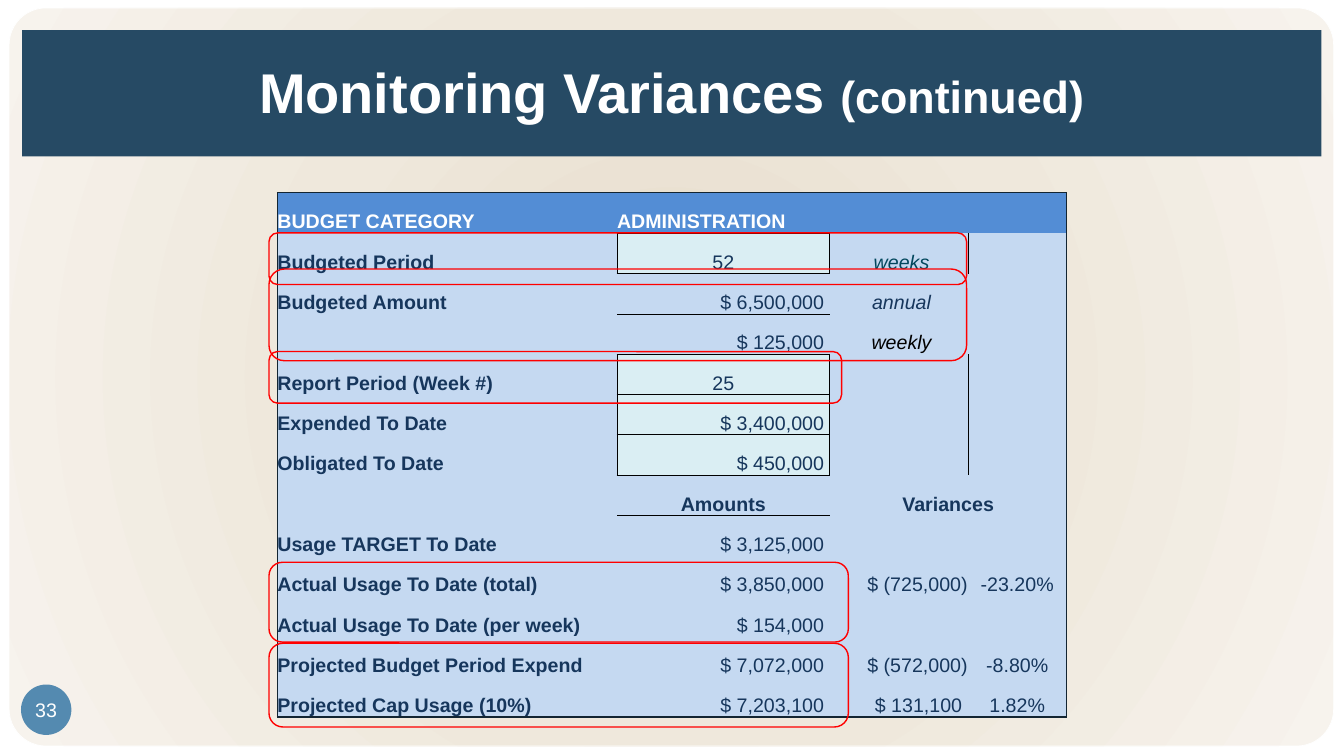
import pptx
import pptx.util
import pptx.dml.color
import pptx.enum.shapes
import pptx.enum.text
import pptx.oxml
import pptx.oxml.ns

Cm, Pt = pptx.util.Cm, pptx.util.Pt
KIND = pptx.enum.shapes.MSO_SHAPE
ALIGN = pptx.enum.text.PP_ALIGN
ANCHOR = pptx.enum.text.MSO_ANCHOR

HUES = {"white": "FFFFFF", "band": "264A64", "badge": "548AB0", "ring": "FF0000",
        "head": "538DD5", "body": "C5D9F1", "input": "DAEEF3", "ink": "16365C",
        "teal": "02475D", "black": "000000", "frame": "132532"}
GLOW = ((0, "E6DBC9"), (50, "EFE8DC"), (100, "F7F3ED"))

ROWS = [
    ("BUDGET CATEGORY", "ADMINISTRATION", "", ""),
    ("Budgeted Period", "52", "weeks", ""),
    ("Budgeted Amount", "$ 6,500,000", "annual", ""),
    ("", "$ 125,000", "weekly", ""),
    ("Report Period (Week #)", "25", "", ""),
    ("Expended To Date", "$ 3,400,000", "", ""),
    ("Obligated To Date", "$ 450,000", "", ""),
    ("", "Amounts", "Variances", ""),
    ("Usage TARGET To Date", "$ 3,125,000", "", ""),
    ("Actual Usage To Date (total)", "$ 3,850,000", "$ (725,000)", "-23.20%"),
    ("Actual Usage To Date (per week)", "$ 154,000", "", ""),
    ("Projected Budget Period Expend", "$ 7,072,000", "$ (572,000)", "-8.80%"),
    ("Projected Cap Usage (10%)", "$ 7,203,100", "$ 131,100", "1.82%"),
]
WIDTHS = (8.56, 5.36, 3.48, 2.49)
LEFT, TOP, HIGH = 6.99, 4.86, 13.21
SUBHEAD = 7
INPUTS = {(1, 1), (4, 1), (5, 1), (6, 1)}
NOTES = {"weeks": "teal", "annual": "ink", "weekly": "black"}
RING_X = 6.78
RINGS = [(5.87, 17.58, 1.3), (16.21, 14.6, 2.11), (14.17, 14.6, 2.01),
         (8.86, 14.43, 1.3), (6.78, 17.58, 2.31)]
TITLE = [("Monitoring Variances ", 40, True), ("(continued)", 32, True)]
SIDES = (("L", 0, -1), ("R", 0, 1), ("T", -1, 0), ("B", 1, 0))


def tint(name):
    return pptx.dml.color.RGBColor.from_string(HUES[name])


def apply(thing, form):
    for key, value in form.items():
        setattr(thing, key, value)


def xml(tag, inner, attrs=""):
    return pptx.oxml.parse_xml(
        f"<a:{tag} {pptx.oxml.ns.nsdecls('a')} {attrs}>{inner}</a:{tag}>")


def write(frame, parts, align, hue, italic=False):
    par = frame.paragraphs[0]
    par.alignment = align
    for text, size, bold in parts:
        run = par.add_run()
        run.text = text
        apply(run.font, {"name": "Arial", "size": Pt(size), "bold": bold, "italic": italic})
        run.font.color.rgb = tint(hue)


def draw(slide, kind, box, fill=None, line=None, width=1):
    shape = slide.shapes.add_shape(kind, *map(Cm, box))
    shape.shadow.inherit = False
    if fill:
        shape.fill.solid()
        shape.fill.fore_color.rgb = tint(fill)
    else:
        shape.fill.background()
    if line:
        shape.line.color.rgb = tint(line)
        shape.line.width = Pt(width)
    else:
        shape.line.fill.background()
    return shape


def glow(shape):
    stops = "".join(f'<a:gs pos="{pos * 1000}"><a:srgbClr val="{hue}"/></a:gs>'
                    for pos, hue in GLOW)
    focus = '<a:fillToRect l="50000" t="50000" r="50000" b="50000"/>'
    props = shape.element.spPr
    old = props.find(pptx.oxml.ns.qn("a:noFill"))
    props.replace(old, xml("gradFill", f'<a:gsLst>{stops}</a:gsLst>'
                                       f'<a:path path="circle">{focus}</a:path>'))


def edge(cell, row, col):
    span = cell.span_width if cell.is_merge_origin else 1
    for side, down, over in SIDES:
        near = (row + down, col + (span if over > 0 else over))
        if (row, col) in INPUTS or near in INPUTS:
            hue, width = "black", 0.5
        elif not (0 <= near[0] < len(ROWS) and 0 <= near[1] < len(WIDTHS)):
            hue, width = "frame", 1
        else:
            continue
        ink = f'<a:solidFill><a:srgbClr val="{HUES[hue]}"/></a:solidFill>'
        cell._tc.get_or_add_tcPr().append(xml("ln" + side, ink, f'w="{Pt(width)}"'))


def fill_cell(cell, row, col, text):
    money = text.startswith("$")
    label = row == 0 or col == 0
    align = ALIGN.LEFT if label else ALIGN.RIGHT if money else ALIGN.CENTER
    apply(cell, {"margin_left": Cm(0.14 if text in NOTES else 0),
                 "margin_right": Cm(0.14 if money and text[-1] != ")" else 0),
                 "margin_top": 0, "margin_bottom": 0,
                 "vertical_anchor": ANCHOR.BOTTOM})
    edge(cell, row, col)
    cell.fill.solid()
    cell.fill.fore_color.rgb = tint(
        "head" if row == 0 else "input" if (row, col) in INPUTS else "body")
    if text:
        hue = "white" if row == 0 else NOTES.get(text, "ink")
        write(cell.text_frame, [(text, 14, label or row == SUBHEAD)], align, hue, text in NOTES)


def add_grid(slide):
    box = (LEFT, TOP, sum(WIDTHS), HIGH)
    grid = slide.shapes.add_table(len(ROWS), len(WIDTHS), *map(Cm, box)).table
    apply(grid, {"first_row": False, "horz_banding": False})
    style = grid._tbl.tblPr.find(pptx.oxml.ns.qn("a:tableStyleId"))
    style.text = "{2D5ABB26-0587-4C30-8999-92F81FD0307C}"
    for col, width in zip(grid.columns, WIDTHS):
        col.width = Cm(width)
    for row in grid.rows:
        row.height = Cm(HIGH / len(ROWS))
    grid.cell(SUBHEAD, 2).merge(grid.cell(SUBHEAD, 3))
    for row, texts in enumerate(ROWS):
        for col, text in enumerate(texts):
            fill_cell(grid.cell(row, col), row, col, text)


def main():
    deck = pptx.Presentation()
    apply(deck, {"slide_width": Cm(33.87), "slide_height": Cm(19.05)})
    slide = deck.slides.add_slide(deck.slide_layouts[6])
    slide.background.fill.solid()
    slide.background.fill.fore_color.rgb = tint("white")

    panel = draw(slide, KIND.ROUNDED_RECTANGLE, (0.23, 0.2, 33.38, 18.6), None, "white", 0.5)
    panel.adjustments[0] = 0.05
    glow(panel)
    add_grid(slide)

    title = draw(slide, KIND.RECTANGLE, (0.56, 0.76, 32.74, 3.18), "band")
    apply(title.text_frame, {"word_wrap": True, "vertical_anchor": ANCHOR.MIDDLE,
                             "margin_top": Cm(0.13), "margin_bottom": Cm(0.25)})
    write(title.text_frame, TITLE, ALIGN.CENTER, "white")

    badge = draw(slide, KIND.OVAL, (0.53, 17.25, 1.27, 1.27), "badge")
    apply(badge.text_frame, {"word_wrap": False, "vertical_anchor": ANCHOR.MIDDLE,
                             "margin_left": 0, "margin_right": 0,
                             "margin_top": 0, "margin_bottom": 0})
    write(badge.text_frame, [("33", 14, False)], ALIGN.CENTER, "white")

    for top, width, high in RINGS:
        draw(slide, KIND.ROUNDED_RECTANGLE, (RING_X, top, width, high), None, "ring")
    deck.save("out.pptx")


if __name__ == "__main__":
    main()
